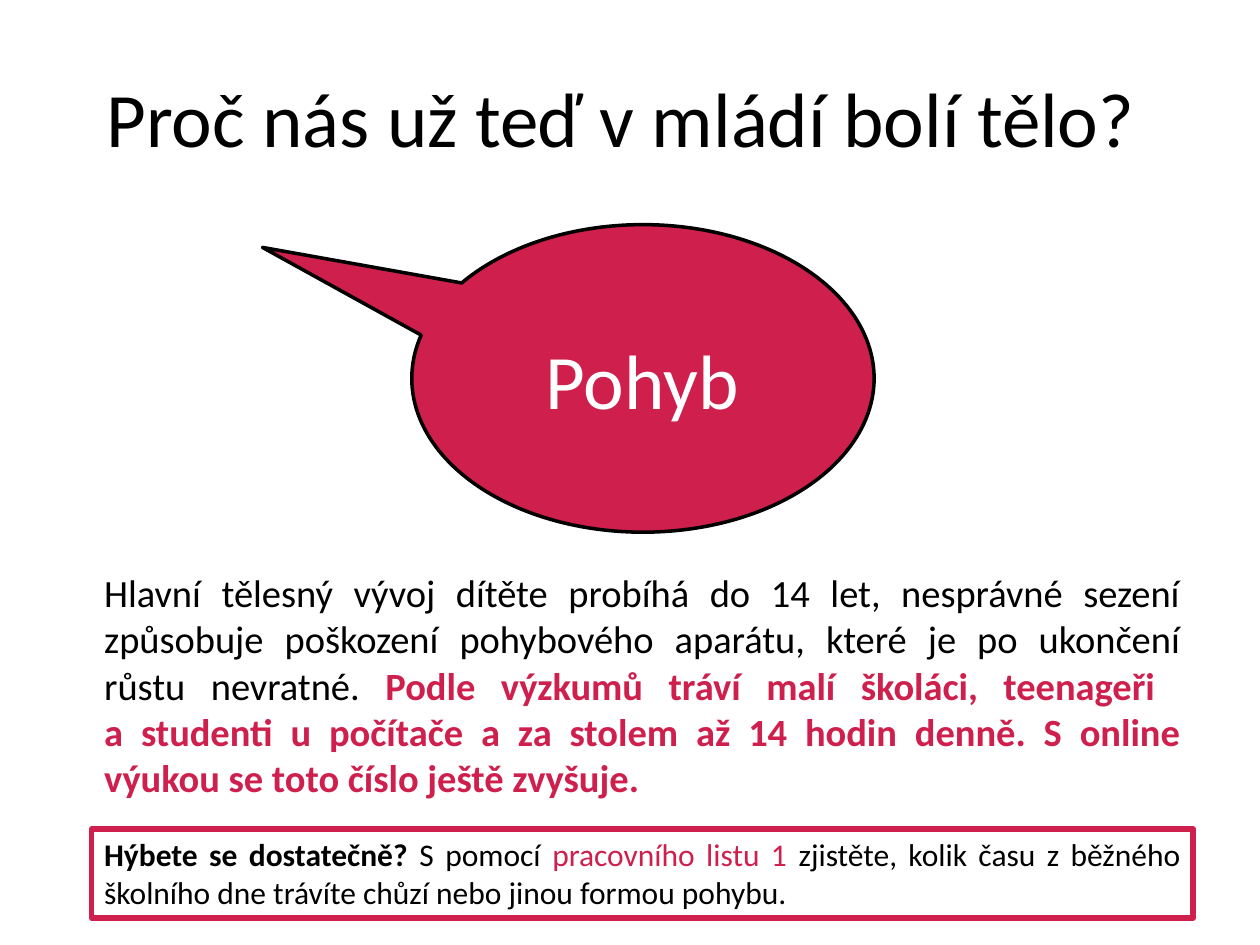
"""Build the slide about movement and body pain in young people."""
import pptx
import pptx.util
import pptx.dml.color
import pptx.enum.shapes
import pptx.enum.text

Cm, Pt = pptx.util.Cm, pptx.util.Pt
SHAPE = pptx.enum.shapes.MSO_SHAPE
ALIGN = pptx.enum.text.PP_ALIGN
ANCHOR = pptx.enum.text.MSO_ANCHOR
COLORS = {"black": "000000", "white": "FFFFFF", "red": "CE1F4D"}


def rgb(name):
    return pptx.dml.color.RGBColor.from_string(COLORS[name])


def write(sp, size, align, anchor, runs, before=0):
    tf = sp.text_frame
    frame = {"word_wrap": True, "vertical_anchor": anchor,
             "auto_size": pptx.enum.text.MSO_AUTO_SIZE.NONE}
    for key, value in frame.items():
        setattr(tf, key, value)
    p = tf.paragraphs[0]
    p.alignment = align
    p.space_before = Pt(before)
    for text, color, bold in runs:
        for i, line in enumerate(text.split("\n")):
            if i:
                p.add_line_break()
            r = p.add_run()
            r.text = line
            font = {"name": "Calibri", "size": Pt(size), "bold": bold}
            for key, value in font.items():
                setattr(r.font, key, value)
            r.font.color.rgb = rgb(color)


prs = pptx.Presentation()
prs.slide_width, prs.slide_height = Cm(25.4), Cm(19.05)
s = prs.slides.add_slide(prs.slide_layouts[5])

callout = s.shapes.add_shape(SHAPE.OVAL_CALLOUT, Cm(9.86), Cm(2.97), Cm(6.2), Cm(9.32))
callout.rotation = 90
callout.adjustments[0], callout.adjustments[1] = -0.426, 0.823
callout.fill.solid()
callout.fill.fore_color.rgb = rgb("red")

heading = s.shapes.add_textbox(Cm(1.27), Cm(0.76), Cm(22.86), Cm(3.18))
write(heading, 44, ALIGN.CENTER, ANCHOR.MIDDLE,
      [("Proč nás už teď v mládí bolí tělo? ", "black", False)])

title = s.shapes.title
place = {"left": Cm(10.46), "top": Cm(6.05), "width": Cm(4.98), "height": Cm(3.18)}
for key, value in place.items():
    setattr(title, key, value)
write(title, 44, ALIGN.CENTER, ANCHOR.MIDDLE, [("Pohyb", "white", False)])
callout._element.addnext(title._element)

body = s.shapes.add_textbox(Cm(1.85), Cm(11.35), Cm(22.2), Cm(6.27))
write(body, 22, ALIGN.JUSTIFY, ANCHOR.TOP, [
    ("Hlavní tělesný vývoj dítěte probíhá do 14 let, nesprávné sezení způsobuje "
     "poškození pohybového aparátu, které je po ukončení růstu nevratné. ", "black", False),
    ("Podle výzkumů tráví malí školáci, teenageři \na studenti u počítače a za stolem "
     "až 14 hodin denně. S online výukou se toto číslo ještě zvyšuje. ", "red", True),
], before=4.4)

task = s.shapes.add_shape(SHAPE.RECTANGLE, Cm(1.85), Cm(16.71), Cm(22.2), Cm(1.8))
task.fill.background()
write(task, 18, ALIGN.JUSTIFY, ANCHOR.TOP, [
    ("Hýbete se dostatečně? ", "black", True),
    ("S pomocí ", "black", False),
    ("pracovního listu 1 ", "red", False),
    ("zjistěte, kolik času z běžného školního dne trávíte chůzí nebo jinou "
     "formou pohybu. ", "black", False),
])

for sp, color, width in ((callout, "black", 2), (task, "red", 3)):
    sp.shadow.inherit = False
    sp.line.color.rgb = rgb(color)
    sp.line.width = Pt(width)

prs.save("out.pptx")
